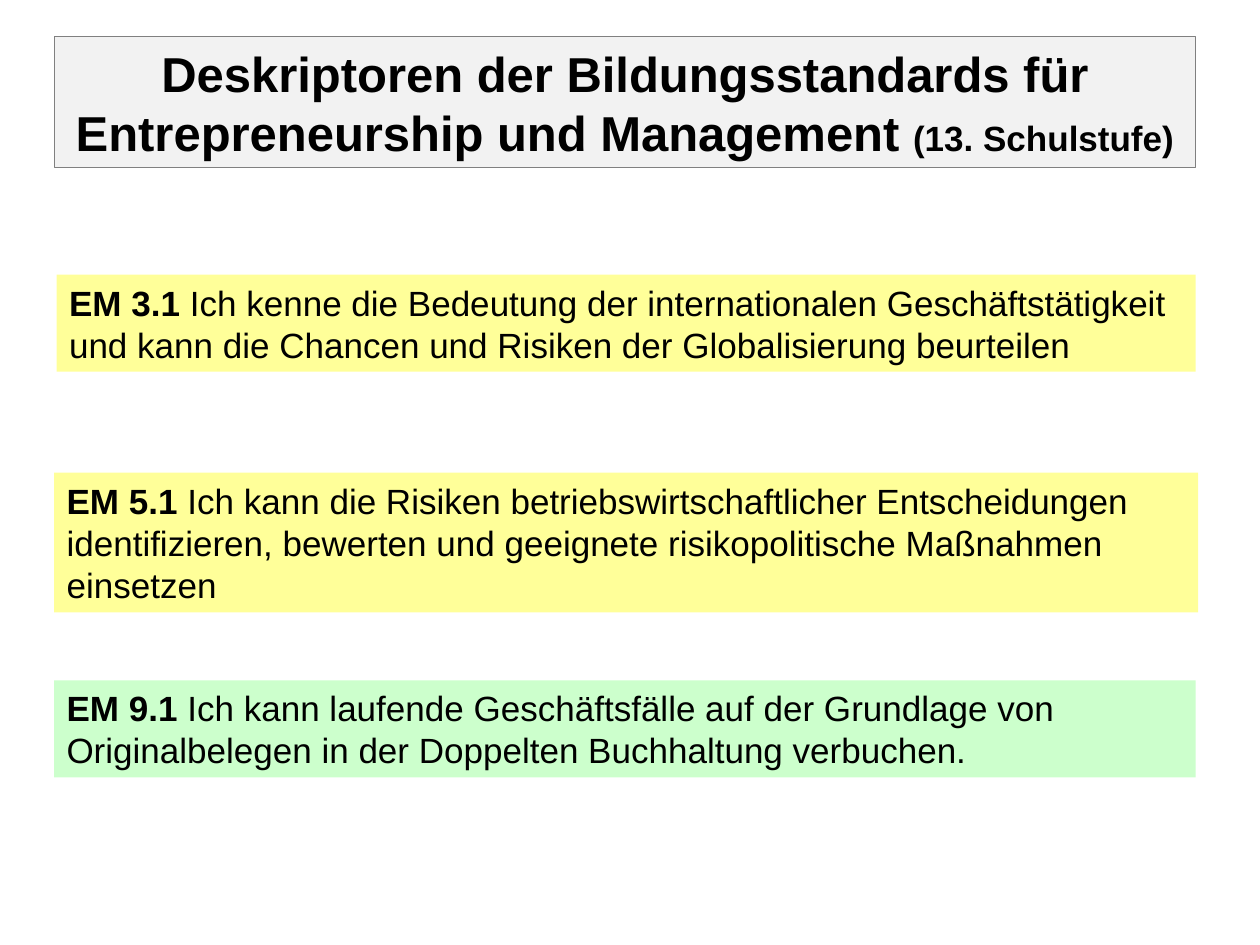
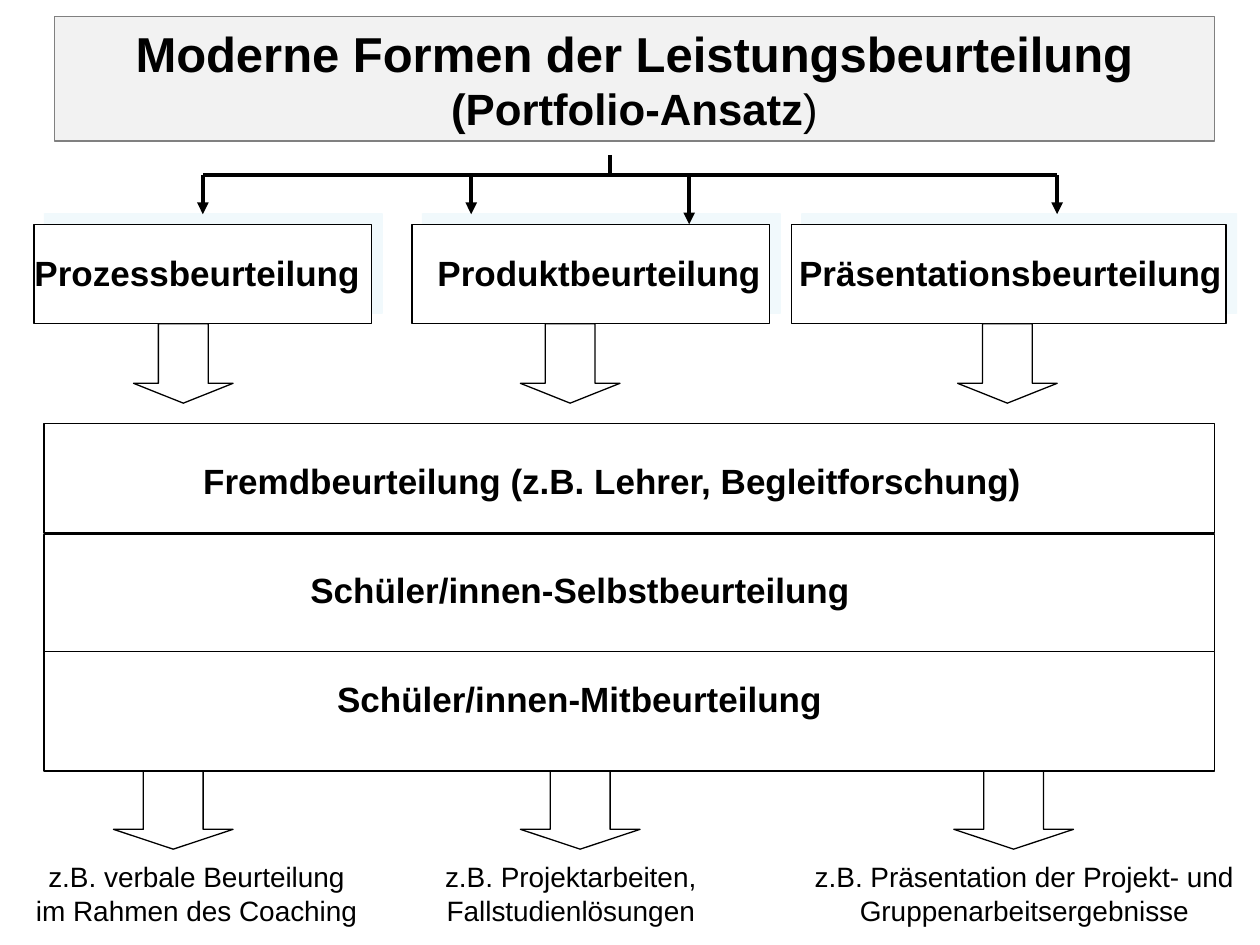
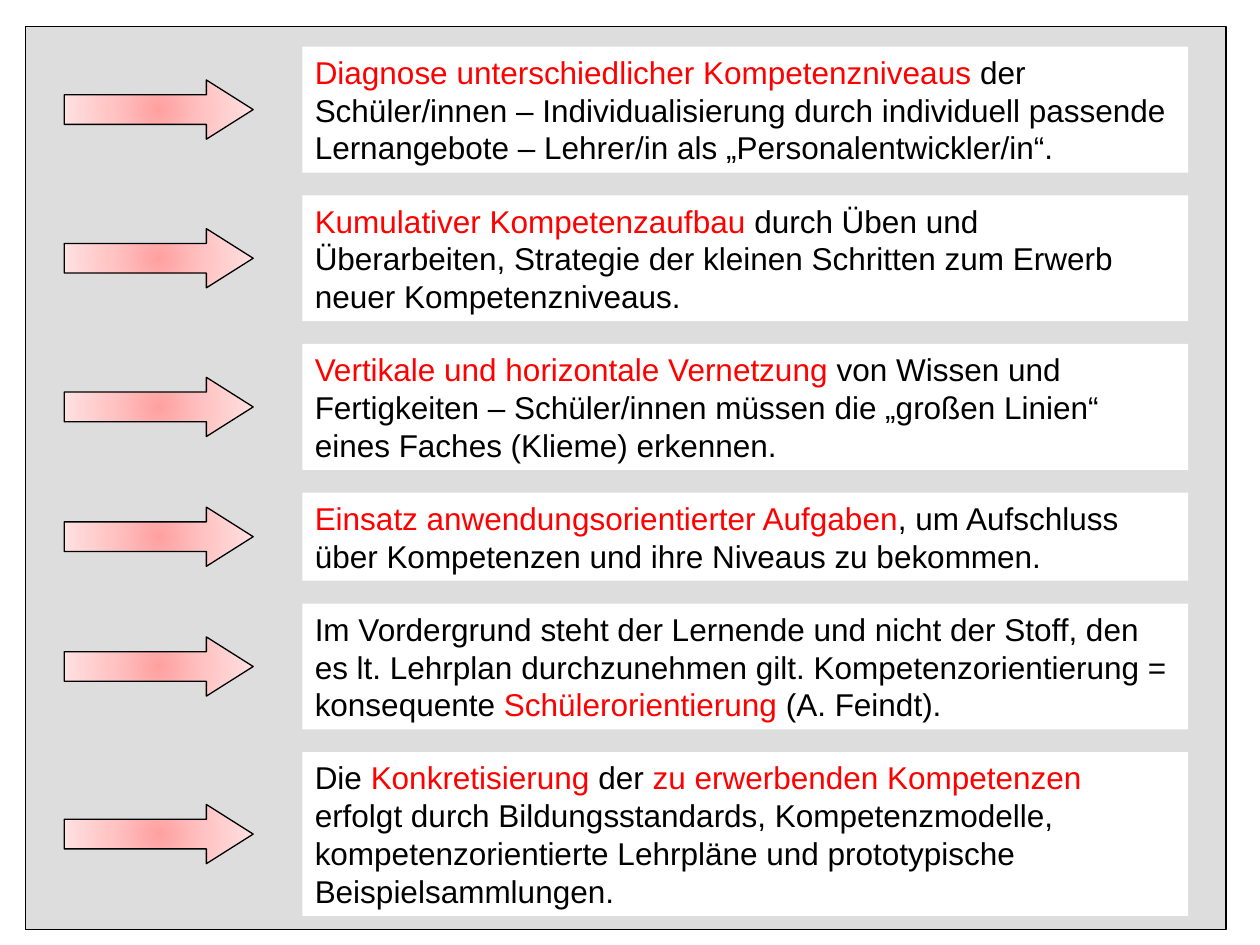
import pptx
import pptx.util
import pptx.oxml
import pptx.oxml.ns
import pptx.dml.color
import pptx.enum.shapes
import pptx.enum.text

Inches = pptx.util.Inches
Pt = pptx.util.Pt
RGBColor = pptx.dml.color.RGBColor
Kind = pptx.enum.shapes.MSO_SHAPE
Align = pptx.enum.text.PP_ALIGN
qn = pptx.oxml.ns.qn

FONT = "Arial"
BLACK = RGBColor(0x00, 0x00, 0x00)
WHITE = RGBColor(0xFF, 0xFF, 0xFF)
GREY = RGBColor(0x80, 0x80, 0x80)
PALE = RGBColor(0xF2, 0xF2, 0xF2)
PANEL = RGBColor(0xDD, 0xDD, 0xDD)
YELLOW = RGBColor(0xFF, 0xFF, 0x99)
GREEN = RGBColor(0xCC, 0xFF, 0xCC)
RED = RGBColor(0xFF, 0x00, 0x00)

NS = 'xmlns:a="http://schemas.openxmlformats.org/drawingml/2006/main"'
SHADOW = (f'<a:outerShdw {NS} dist="107950" dir="18900000" algn="ctr" rotWithShape="0">'
          '<a:srgbClr val="E5F5FA"><a:alpha val="50000"/></a:srgbClr></a:outerShdw>')
GLOW = (f'<a:gradFill {NS} rotWithShape="1"><a:gsLst>'
        '<a:gs pos="0"><a:srgbClr val="FFA0A0"/></a:gs>'
        '<a:gs pos="50000"><a:srgbClr val="FFC5C5"/></a:gs>'
        '<a:gs pos="100000"><a:srgbClr val="FFE3E3"/></a:gs></a:gsLst>'
        '<a:path path="circle"><a:fillToRect l="50000" t="50000" r="50000" b="50000"/>'
        '</a:path></a:gradFill>')


def box(shapes, kind, at, fill, line=None):
    shape = shapes.add_shape(kind, *map(Inches, at))
    shape.shadow.inherit = False
    shape.fill.solid()
    shape.fill.fore_color.rgb = fill
    if line is None:
        shape.line.fill.background()
    else:
        shape.line.color.rgb = line
        shape.line.width = Pt(0.75)
    return shape


def write(shape, paras, align=Align.LEFT, wrap=True):
    frame = shape.text_frame
    frame.word_wrap = wrap
    frame.auto_size = pptx.enum.text.MSO_AUTO_SIZE.NONE
    frame.vertical_anchor = pptx.enum.text.MSO_ANCHOR.MIDDLE
    for i, parts in enumerate(paras):
        para = frame.add_paragraph() if i else frame.paragraphs[0]
        para.alignment = align
        for text, size, bold, color in parts:
            run = para.add_run()
            run.text = text
            run.font.name = FONT
            run.font.size = Pt(size)
            run.font.bold = bold
            run.font.color.rgb = color


deck = pptx.Presentation()
deck.slide_width = Inches(10)
deck.slide_height = Inches(7.5)

heads = [
    ((0.43, 0.29, 9.06, 1.04),
     [[("Deskriptoren der Bildungsstandards für Entrepreneurship und Management ", 28, True, BLACK),
       ("(13. Schulstufe)", 20, True, BLACK)]]),
    ((0.43, 0.13, 9.21, 0.99),
     [[("Moderne Formen der Leistungsbeurteilung", 28, True, BLACK)],
      [("(Portfolio-Ansatz", 25, True, BLACK), (")", 25, False, BLACK)]]),
]
pages = []
for at, paras in heads:
    slide = deck.slides.add_slide(deck.slide_layouts[5])
    title = slide.shapes.title
    title.left, title.top, title.width, title.height = map(Inches, at)
    title.fill.solid()
    title.fill.fore_color.rgb = PALE
    title.line.color.rgb = GREY
    title.line.width = Pt(0.75)
    write(title, paras, Align.CENTER)
    pages.append(slide.shapes)

goals = [
    ((0.45, 2.18, 9.04, 0.77), YELLOW, "EM 3.1 ",
     "Ich kenne die Bedeutung der internationalen Geschäftstätigkeit und kann "
     "die Chancen und Risiken der Globalisierung beurteilen"),
    ((0.43, 3.75, 9.08, 1.11), YELLOW, "EM 5.1 ",
     "Ich kann die Risiken betriebswirtschaftlicher Entscheidungen identifizieren, "
     "bewerten und geeignete risikopolitische Maßnahmen einsetzen"),
    ((0.43, 5.4, 9.06, 0.77), GREEN, "EM 9.1 ",
     "Ich kann laufende Geschäftsfälle auf der Grundlage von Originalbelegen "
     "in der Doppelten Buchhaltung verbuchen."),
]
for at, fill, code, text in goals:
    goal = box(pages[0], Kind.RECTANGLE, at, fill)
    write(goal, [[(code, 20, True, BLACK), (text, 20, False, BLACK)]])

forms = pages[1]
columns = [
    (0.27, 2.68, "Prozessbeurteilung", 0.16, 2.81, 1.06, 0.9,
     ["z.B. verbale Beurteilung", "im Rahmen des Coaching"], 0.17, 2.78),
    (3.27, 2.84, "Produktbeurteilung", 3.36, 2.79, 4.13, 4.13,
     ["z.B. Projektarbeiten,", "Fallstudienlösungen"], 3.42, 2.22),
    (6.28, 3.45, "Präsentationsbeurteilung", 6.23, 3.58, 7.6, 7.57,
     ["z.B. Präsentation der Projekt- und", "Gruppenarbeitsergebnisse"], 6.26, 3.74),
]
for left, width, name, x, span, upper, lower, notes, start, reach in columns:
    card = box(forms, Kind.RECTANGLE, (left, 1.78, width, 0.79), WHITE, BLACK)
    effects = card._element.spPr.find(qn("a:effectLst"))
    effects.append(pptx.oxml.parse_xml(SHADOW))
    label = forms.add_textbox(Inches(x), Inches(1.94), Inches(span), Inches(0.44))
    write(label, [[(name, 20, True, BLACK)]], Align.CENTER, False)
    box(forms, Kind.DOWN_ARROW, (upper, 2.57, 0.79, 0.63), WHITE, BLACK).adjustments[1] = 0.25
    box(forms, Kind.DOWN_ARROW, (lower, 6.11, 0.95, 0.63), WHITE, BLACK).adjustments[1] = 0.25
    note = forms.add_textbox(Inches(start), Inches(6.77), Inches(reach), Inches(0.64))
    write(note, [[(text, 16, False, BLACK)] for text in notes], Align.CENTER, False)

bar = 1.39
links = [
    (4.84, 1.23, 4.84, bar, False),
    (4.84, bar, 1.61, bar, False),
    (4.84, bar, 8.39, bar, False),
    (1.61, bar, 1.61, 1.7, True),
    (3.74, bar, 3.74, 1.7, True),
    (5.47, bar, 5.47, 1.78, True),
    (8.39, bar, 8.39, 1.7, True),
]
for *ends, arrow in links:
    link = forms.add_connector(pptx.enum.shapes.MSO_CONNECTOR.STRAIGHT, *map(Inches, ends))
    link.line.color.rgb = BLACK
    link.line.width = Pt(2.25)
    if arrow:
        link.line._get_or_add_ln().append(
            pptx.oxml.parse_xml(f'<a:tailEnd {NS} type="triangle"/>'))
    link._element.spPr.append(pptx.oxml.parse_xml(f"<a:effectLst {NS}/>"))

rows = [
    (3.36, 0.87, "Fremdbeurteilung (z.B. Lehrer, Begleitforschung)", (1.49, 3.59, 6.74, 0.44)),
    (4.24, 0.94, "Schüler/innen-Selbstbeurteilung", (2.36, 4.46, 4.49, 0.44)),
    (5.17, 0.95, "Schüler/innen-Mitbeurteilung", (2.56, 5.32, 4.08, 0.44)),
]
for top, height, text, at in rows:
    box(forms, Kind.RECTANGLE, (0.35, top, 9.29, height), WHITE, BLACK)
    label = box(forms, Kind.RECTANGLE, at, WHITE)
    write(label, [[(text, 20, True, BLACK)]], Align.CENTER, False)

points = deck.slides.add_slide(deck.slide_layouts[6]).shapes
box(points, Kind.RECTANGLE, (0.2, 0.21, 9.53, 7.17), PANEL, BLACK)
theses = [
    (3, [("Diagnose unterschiedlicher Kompetenzniveaus ", RED),
         ("der Schüler/innen – Individualisierung durch individuell passende "
          "Lernangebote – Lehrer/in als „Personalentwickler/in“.", BLACK)]),
    (3, [("Kumulativer Kompetenzaufbau ", RED),
         ("durch Üben und Überarbeiten, Strategie der kleinen Schritten zum Erwerb "
          "neuer Kompetenzniveaus.", BLACK)]),
    (3, [("Vertikale und horizontale Vernetzung ", RED),
         ("von Wissen und Fertigkeiten – Schüler/innen müssen die „großen Linien“ "
          "eines Faches (Klieme) erkennen.", BLACK)]),
    (2, [("Einsatz anwendungsorientierter Aufgaben", RED),
         (", um Aufschluss über Kompetenzen und ihre Niveaus zu bekommen.", BLACK)]),
    (3, [("Im Vordergrund steht der Lernende und nicht der Stoff, den es lt. Lehrplan "
          "durchzunehmen gilt. Kompetenzorientierung = konsequente ", BLACK),
         ("Schülerorientierung", RED), (" (A. Feindt).", BLACK)]),
    (4, [("Die ", BLACK), ("Konkretisierung", RED), (" der ", BLACK),
         ("zu erwerbenden Kompetenzen ", RED),
         ("erfolgt durch Bildungsstandards, Kompetenzmodelle, kompetenzorientierte "
          "Lehrpläne und prototypische Beispielsammlungen.", BLACK)]),
]
top = 0.37
for lines, parts in theses:
    height = 0.1 + 0.3 * lines
    group = points.add_group_shape().shapes
    arrow = box(group, Kind.RIGHT_ARROW, (0.51, top + height / 2 - 0.235, 1.5, 0.47), WHITE, BLACK)
    arrow.adjustments[1] = 0.79
    shell = arrow._element.spPr
    shell.replace(shell.find(qn("a:solidFill")), pptx.oxml.parse_xml(GLOW))
    thesis = box(group, Kind.RECTANGLE, (2.4, top, 7.03, height), WHITE)
    write(thesis, [[(text, 18, False, color) for text, color in parts]])
    top += height + 0.18

deck.save("out.pptx")
